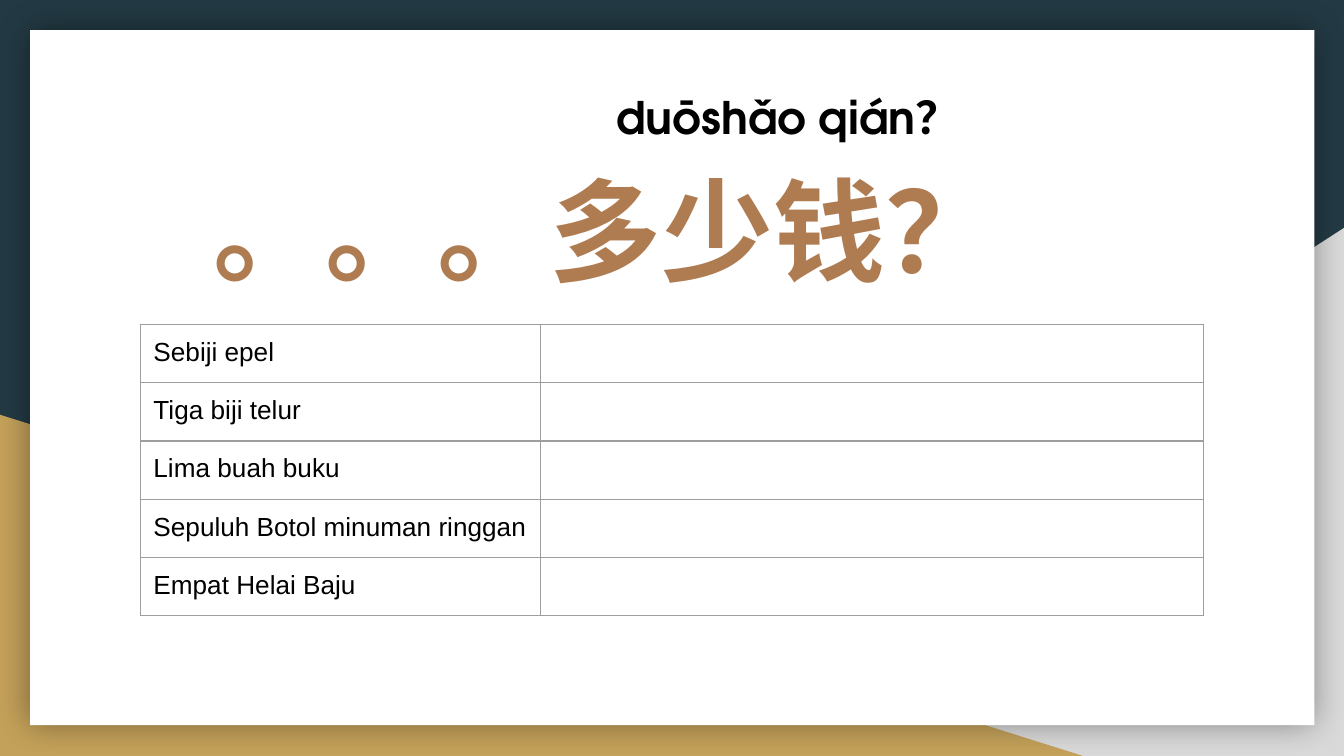
from lxml.etree import SubElement
from pptx import Presentation
from pptx.dml.color import RGBColor
from pptx.enum.shapes import MSO_SHAPE as Preset
from pptx.enum.text import MSO_ANCHOR as Anchor, MSO_AUTO_SIZE as AutoSize, PP_ALIGN as Align
from pptx.oxml import parse_xml
from pptx.oxml.ns import nsdecls, qn
from pptx.util import Cm, Pt

NAVY = RGBColor(0x23, 0x3A, 0x44)
GREY = RGBColor(0xD9, 0xD9, 0xD9)
GOLD = RGBColor(0xC4, 0xA1, 0x5A)
WHITE = RGBColor(0xFF, 0xFF, 0xFF)
BLACK = RGBColor(0x00, 0x00, 0x00)
BROWN = RGBColor(0xAF, 0x7B, 0x51)
BORDER = RGBColor(0x9E, 0x9E, 0x9E)
TITLE_FONT = "TeX Gyre Adventor"
INSET = Cm(0.25)

presentation = Presentation()
presentation.slide_width = Cm(25.4)
presentation.slide_height = Cm(14.29)
slide = presentation.slides.add_slide(presentation.slide_layouts[5])
slide.background.fill.solid()
slide.background.fill.fore_color.rgb = NAVY


def add_panel(preset, left, top, width, height, color):
    shape = slide.shapes.add_shape(preset, Cm(left), Cm(top), Cm(width), Cm(height))
    shape.shadow.inherit = False
    shape.fill.solid()
    shape.fill.fore_color.rgb = color
    shape.line.fill.background()
    return shape


def add_run(paragraph, text, font_name, size, color, bold=False):
    run = paragraph.add_run()
    run.text = text
    run.font.name = font_name
    run.font.size = Pt(size)
    run.font.bold = bold
    run.font.color.rgb = color
    return run


grey_corner = add_panel(Preset.RIGHT_TRIANGLE, 9.96, 4.31, 15.44, 9.98, GREY)
grey_corner.element.spPr.find(qn("a:xfrm")).set("flipH", "1")
add_panel(Preset.RIGHT_TRIANGLE, 0, 7.84, 20.47, 6.45, GOLD)
card = add_panel(Preset.RECTANGLE, 0.57, 0.57, 24.27, 13.14, WHITE)
card.element.spPr.find(qn("a:effectLst")).append(parse_xml(
    f'<a:outerShdw {nsdecls("a")} blurRad="{Pt(18)}" dist="0" dir="0" algn="ctr" rotWithShape="0">'
    '<a:srgbClr val="000000"><a:alpha val="40000"/></a:srgbClr></a:outerShdw>'))

items = ["Sebiji epel", "Tiga biji telur", "Lima buah buku",
         "Sepuluh Botol minuman ringgan", "Empat Helai Baju"]
row_height = Cm(1.06)
table = slide.shapes.add_table(len(items), 2, Cm(2.65), Cm(6.13), Cm(20.1),
                               row_height * len(items)).table
table.first_row = False
table.horz_banding = False
table.columns[0].width = Cm(7.57)
table.columns[1].width = Cm(12.53)
for row, item in zip(table.rows, items):
    row.height = row_height
    for cell in row.cells:
        cell.margin_left = cell.margin_right = INSET
        cell.margin_top = cell.margin_bottom = INSET
        properties = cell._tc.get_or_add_tcPr()
        for side in ("lnL", "lnR", "lnT", "lnB"):
            properties.append(parse_xml(
                f'<a:{side} {nsdecls("a")} w="{Pt(0.75)}"><a:solidFill>'
                f'<a:srgbClr val="{BORDER}"/></a:solidFill></a:{side}>'))
        cell.fill.background()
    add_run(row.cells[0].text_frame.paragraphs[0], item, "Arial", 14, BLACK)
    empty_paragraph = row.cells[1].text_frame.paragraphs[0]
    SubElement(empty_paragraph._p, qn("a:endParaRPr")).set("sz", "1400")

title = slide.shapes.title
slide.shapes.element.append(title.element)
title.left, title.top, title.width, title.height = Cm(3.78), Cm(1.12), Cm(21.84), Cm(3.53)
frame = title.text_frame
frame.auto_size = AutoSize.NONE
frame.word_wrap = True
frame.vertical_anchor = Anchor.MIDDLE
frame.margin_left = frame.margin_right = INSET
frame.margin_top = frame.margin_bottom = INSET
pinyin = frame.paragraphs[0]
characters = frame.add_paragraph()
for paragraph, text, size, color, line_height, indent in (
        (pinyin, "duōshǎo qián？", 24, BLACK, 72, 7.62),
        (characters, "。。。多少钱？", 60, BROWN, 82, 0)):
    paragraph.alignment = Align.LEFT
    paragraph.line_spacing = Pt(line_height)
    paragraph.space_before = Pt(0)
    paragraph._p.get_or_add_pPr().set("marL", str(Cm(indent)))
    run = add_run(paragraph, text, TITLE_FONT, size, color, True)
    SubElement(run.font._element, qn("a:ea")).set("typeface", TITLE_FONT)

presentation.save("out.pptx")
